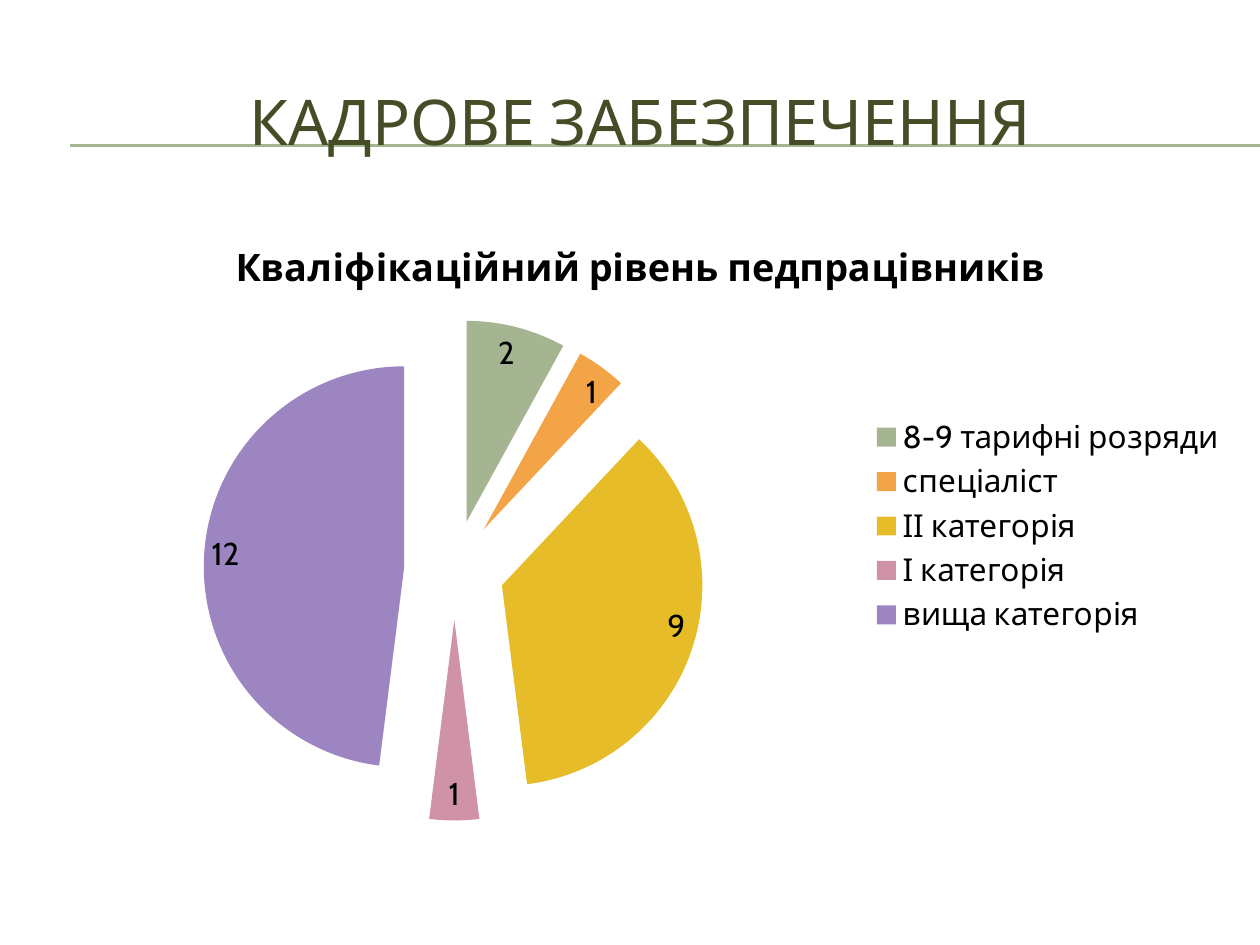
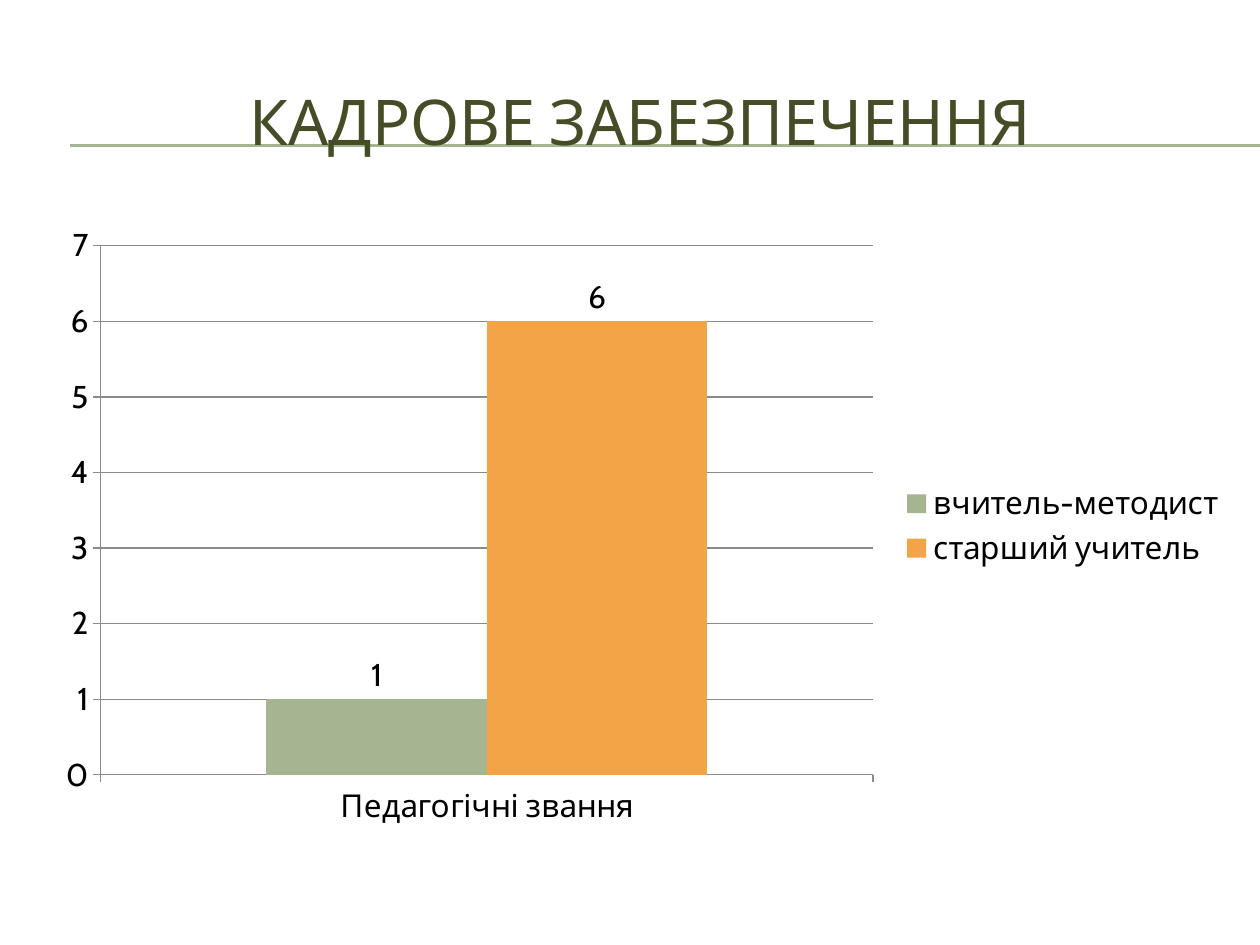
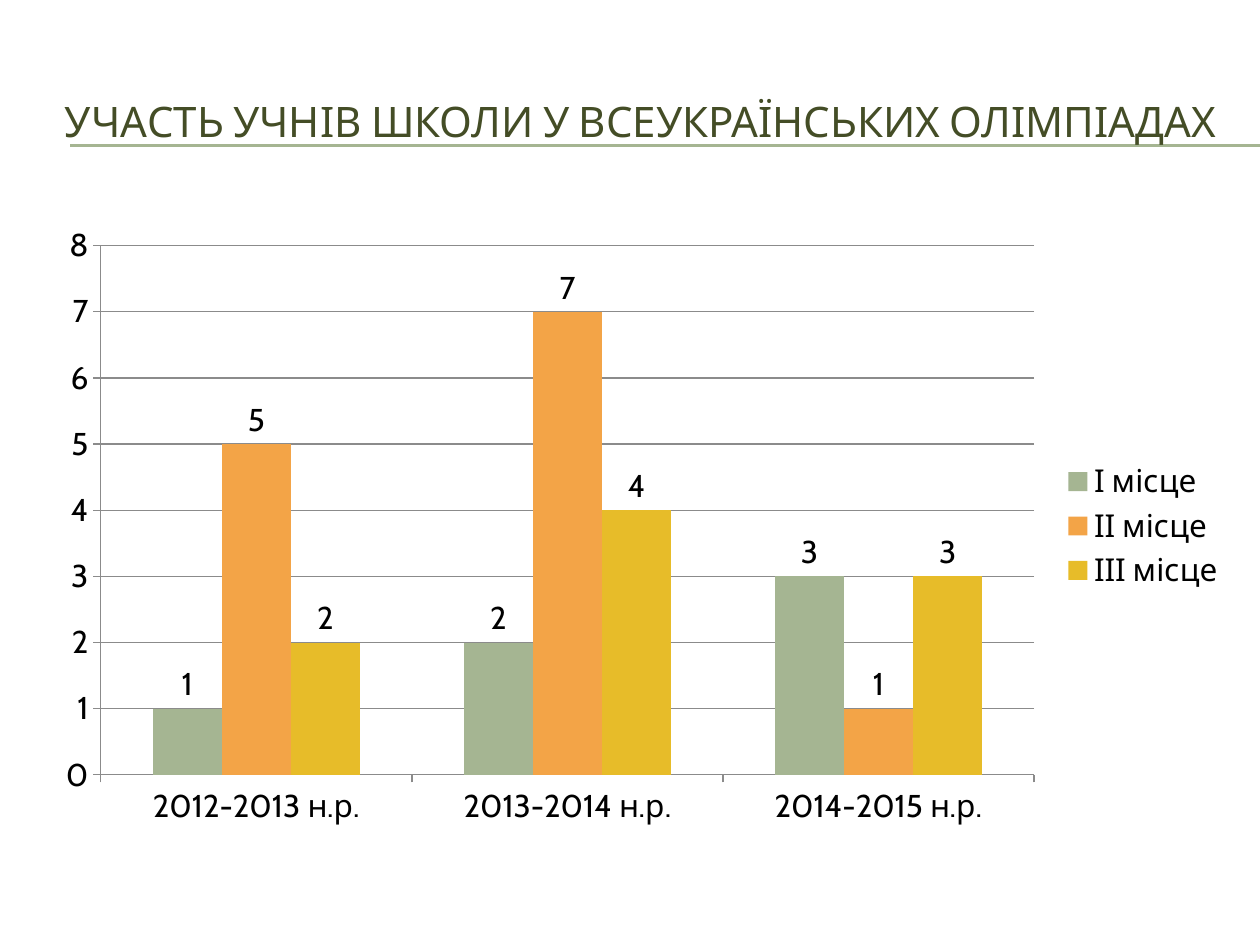
from lxml import etree
from pptx import Presentation
from pptx.chart.data import CategoryChartData
from pptx.dml.color import RGBColor
from pptx.enum.chart import XL_CHART_TYPE, XL_LABEL_POSITION, XL_LEGEND_POSITION, XL_TICK_MARK
from pptx.enum.shapes import MSO_CONNECTOR
from pptx.enum.text import MSO_ANCHOR, PP_ALIGN
from pptx.oxml.ns import qn
from pptx.util import Pt

PIE = XL_CHART_TYPE.PIE
COLUMNS = XL_CHART_TYPE.COLUMN_CLUSTERED
INSIDE_END = XL_LABEL_POSITION.INSIDE_END
OUTSIDE_END = XL_LABEL_POSITION.OUTSIDE_END
LEGEND_RIGHT = XL_LEGEND_POSITION.RIGHT
TICK_OUTSIDE = XL_TICK_MARK.OUTSIDE
STRAIGHT = MSO_CONNECTOR.STRAIGHT
MIDDLE = MSO_ANCHOR.MIDDLE
CENTER = PP_ALIGN.CENTER

COLORS = {
    "title": "444D26",
    "text": "000000",
    "grid": "8B8B8B",
    "green": "A5B592",
    "orange": "F3A447",
    "yellow": "E7BC29",
    "pink": "D092A7",
    "purple": "9C85C0",
}
PALETTE = ["green", "orange", "yellow", "pink", "purple"]
FONT = "Cabin"
SLIDE_WIDTH, SLIDE_HEIGHT = 720, 540
CONTENT_LEFT, CONTENT_WIDTH = 24, 684
RULE_LEFT = 40.3
RULE_TOPS = (82.8, 83.5)

STAFF_TITLE = "КАДРОВЕ ЗАБЕЗПЕЧЕННЯ"
OLYMPIAD_TITLE = "УЧАСТЬ УЧНІВ ШКОЛИ У ВСЕУКРАЇНСЬКИХ ОЛІМПІАДАХ"
QUALIFICATION_TITLE = "Кваліфікаційний рівень педпрацівників"
QUALIFICATIONS = {
    "8-9 тарифні розряди": 2,
    "спеціаліст": 1,
    "ІІ категорія": 9,
    "І категорія": 1,
    "вища категорія": 12,
}
TEACHER_RANKS = {"вчитель-методист": [1], "старший учитель": [6]}
SCHOOL_YEARS = ["2012-2013 н.р.", "2013-2014 н.р.", "2014-2015 н.р."]
OLYMPIAD_PLACES = {"І місце": [1, 2, 3], "ІІ місце": [5, 7, 1], "ІІІ місце": [2, 4, 3]}


def rgb(name):
    return RGBColor.from_string(COLORS[name])


def style_font(font, size, color):
    font.name = FONT
    font.size = Pt(size)
    font.color.rgb = rgb(color)


def fill_solid(element, color):
    element.format.fill.solid()
    element.format.fill.fore_color.rgb = rgb(color)


def style_line(line, color):
    line.color.rgb = rgb(color)
    line.width = Pt(0.75)


def add_rule(slide, top):
    rule = slide.shapes.add_connector(STRAIGHT, Pt(RULE_LEFT), Pt(top), Pt(SLIDE_WIDTH), Pt(top))
    style_line(rule.line, "green")
    etree.SubElement(rule._element.spPr, qn("a:effectLst"))


def add_title(slide, text, size):
    box = slide.shapes.add_textbox(Pt(CONTENT_LEFT), Pt(36), Pt(CONTENT_WIDTH), Pt(66))
    text_frame = box.text_frame
    text_frame.word_wrap = True
    text_frame.vertical_anchor = MIDDLE
    text_frame.text = text
    paragraph = text_frame.paragraphs[0]
    paragraph.alignment = CENTER
    style_font(paragraph.runs[0].font, size, "title")


def add_titled_slide(presentation, title, size=36):
    slide = presentation.slides.add_slide(presentation.slide_layouts[6])
    for top in RULE_TOPS:
        add_rule(slide, top)
    add_title(slide, title, size)
    return slide


def add_chart(slide, chart_type, categories, series_values, label_position):
    chart_data = CategoryChartData()
    chart_data.categories = categories
    for name, values in series_values.items():
        chart_data.add_series(name, values)
    frame = slide.shapes.add_chart(
        chart_type, Pt(CONTENT_LEFT), Pt(122.4), Pt(CONTENT_WIDTH), Pt(356.4), chart_data
    )
    chart = frame.chart
    style_font(chart.font, 18, "text")
    chart.has_title = False
    chart.has_legend = True
    chart.legend.position = LEGEND_RIGHT
    chart.legend.include_in_layout = False
    plot = chart.plots[0]
    plot.has_data_labels = True
    plot.data_labels.show_value = True
    plot.data_labels.position = label_position
    style_font(plot.data_labels.font, 18, "text")
    return chart


def add_exploded_pie(slide, title, shares):
    chart = add_chart(slide, PIE, list(shares), {title: list(shares.values())}, INSIDE_END)
    chart.has_title = True
    chart.chart_title.include_in_layout = False
    chart.chart_title.text_frame.text = title
    title_font = chart.chart_title.text_frame.paragraphs[0].runs[0].font
    style_font(title_font, 21.6, "text")
    title_font.bold = True
    plot = chart.plots[0]
    plot.vary_by_categories = True
    series = plot.series[0]
    explosion = etree.Element(qn("c:explosion"), val="25")
    series._element.find(qn("c:tx")).addnext(explosion)
    for index, color in enumerate(PALETTE[:len(shares)]):
        fill_solid(series.points[index], color)


def add_columns(slide, categories, series_values):
    chart = add_chart(slide, COLUMNS, categories, series_values, OUTSIDE_END)
    plot = chart.plots[0]
    plot.vary_by_categories = False
    plot.gap_width = 150
    plot.overlap = 0
    for series, color in zip(plot.series, PALETTE):
        fill_solid(series, color)
    for axis in (chart.category_axis, chart.value_axis):
        axis.major_tick_mark = TICK_OUTSIDE
        style_line(axis.format.line, "grid")
    chart.value_axis.has_major_gridlines = True
    style_line(chart.value_axis.major_gridlines.format.line, "grid")


def main():
    presentation = Presentation()
    presentation.slide_width = Pt(SLIDE_WIDTH)
    presentation.slide_height = Pt(SLIDE_HEIGHT)

    qualification_slide = add_titled_slide(presentation, STAFF_TITLE)
    add_exploded_pie(qualification_slide, QUALIFICATION_TITLE, QUALIFICATIONS)

    ranks_slide = add_titled_slide(presentation, STAFF_TITLE)
    add_columns(ranks_slide, ["Педагогічні звання"], TEACHER_RANKS)

    olympiad_slide = add_titled_slide(presentation, OLYMPIAD_TITLE, 24)
    add_columns(olympiad_slide, SCHOOL_YEARS, OLYMPIAD_PLACES)

    presentation.save("out.pptx")


if __name__ == "__main__":
    main()
